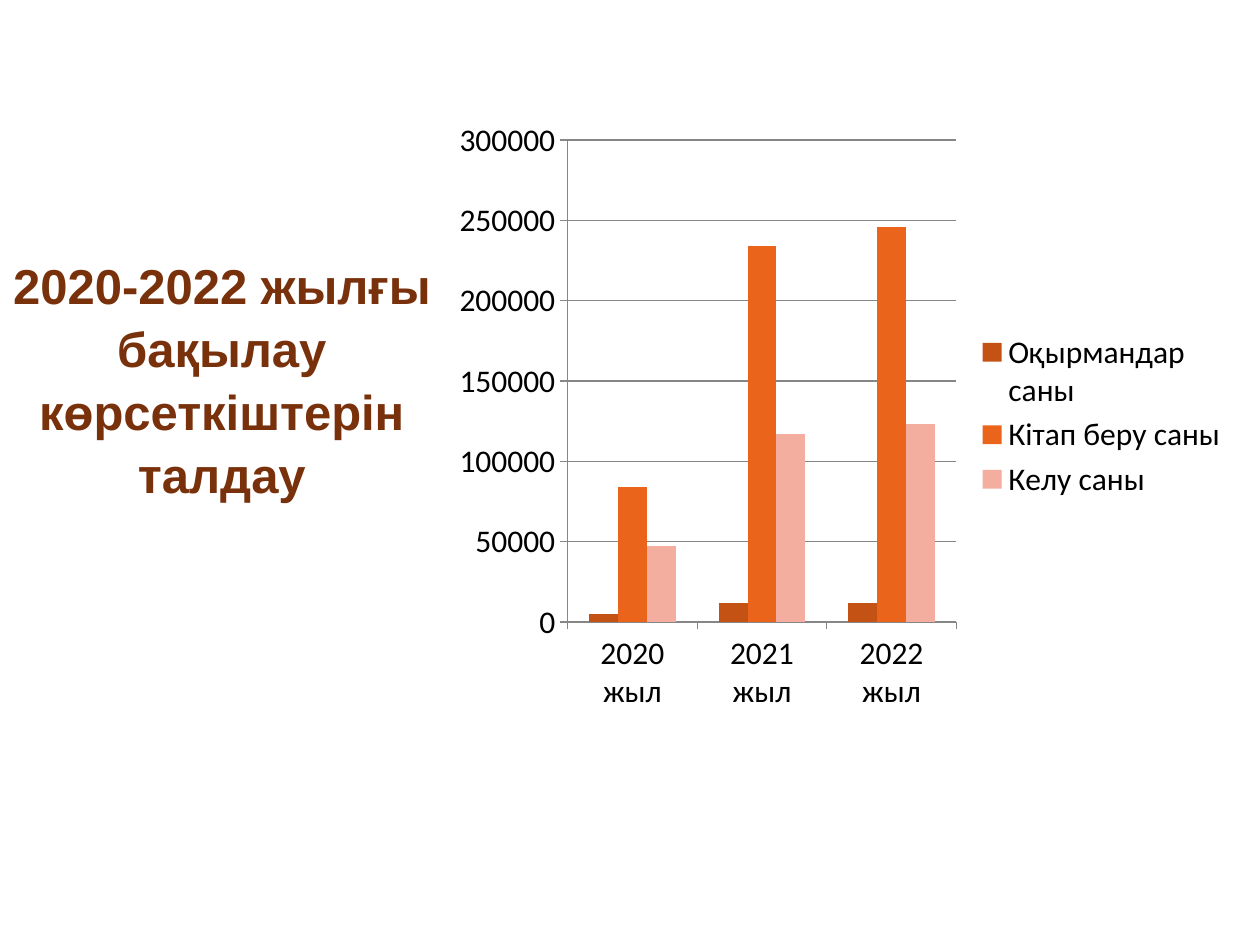
from dataclasses import dataclass

from pptx import Presentation
from pptx import util as u
from pptx.chart.data import CategoryChartData
from pptx.dml.color import RGBColor
from pptx.enum import chart as ch
from pptx.enum import text

WIDTH, HEIGHT = u.Inches(10), u.Inches(7.5)


@dataclass(frozen=True)
class Theme:
    title_font: str = "Arial"
    chart_font: str = "Calibri"
    title_size: int = 28
    chart_size: int = 18
    title_color: str = "78310B"
    ink: str = "000000"
    rule: str = "868686"
    bars: tuple = ("C35214", "EB641B", "F4AEA0")


THEME = Theme()
YEARS = ("2020 жыл", "2021 жыл", "2022 жыл")
INDICATORS = {
    "Оқырмандар саны": (5000, 12000, 12000),
    "Кітап беру саны": (84000, 234000, 246000),
    "Келу саны": (47000, 117000, 123000),
}


def area(left, top, width, height):
    """Turn shares of the slide's size into lengths."""
    return (int(WIDTH * left), int(HEIGHT * top),
            int(WIDTH * width), int(HEIGHT * height))


def style_font(font, name, size, color, bold=False):
    font.name = name
    font.size = u.Pt(size)
    font.bold = bold
    font.color.rgb = RGBColor.from_string(color)


def style_line(line):
    line.color.rgb = RGBColor.from_string(THEME.rule)
    line.width = u.Pt(0.75)


def add_title(slide, wording, place):
    frame = slide.shapes.add_textbox(*place).text_frame
    frame.word_wrap = True
    frame.auto_size = text.MSO_AUTO_SIZE.SHAPE_TO_FIT_TEXT
    heading = frame.paragraphs[0]
    heading.alignment = text.PP_ALIGN.CENTER
    heading.line_spacing = 1.07
    run = heading.add_run()
    run.text = wording
    style_font(run.font, THEME.title_font, THEME.title_size,
               THEME.title_color, bold=True)


def add_indicator_chart(slide, place):
    figures = CategoryChartData(number_format="General")
    figures.categories = YEARS
    for name, counts in INDICATORS.items():
        figures.add_series(name, counts)
    chart = slide.shapes.add_chart(
        ch.XL_CHART_TYPE.COLUMN_CLUSTERED, *place, figures).chart
    style_font(chart.font, THEME.chart_font, THEME.chart_size, THEME.ink)
    chart.has_title = False

    # Columns
    columns = chart.plots[0]
    columns.vary_by_categories = False
    columns.gap_width = 150
    columns.overlap = 0
    for series, color in zip(columns.series, THEME.bars):
        series.format.fill.solid()
        series.format.fill.fore_color.rgb = RGBColor.from_string(color)

    # Axes and gridlines
    for axis in (chart.category_axis, chart.value_axis):
        axis.major_tick_mark = ch.XL_TICK_MARK.OUTSIDE
        style_line(axis.format.line)
    counts_axis = chart.value_axis
    counts_axis.minimum_scale = 0
    counts_axis.maximum_scale = 300000
    counts_axis.major_unit = 50000
    counts_axis.has_major_gridlines = True
    style_line(counts_axis.major_gridlines.format.line)

    # Legend
    chart.has_legend = True
    chart.legend.position = ch.XL_LEGEND_POSITION.RIGHT
    chart.legend.include_in_layout = False


def main():
    deck = Presentation()
    deck.slide_width, deck.slide_height = WIDTH, HEIGHT
    slide = deck.slides.add_slide(deck.slide_layouts[6])

    # Heading on the left, chart on the right
    split = 0.352
    add_title(slide, "2020-2022 жылғы бақылау көрсеткіштерін талдау",
              area(0, 0.26, split, 0.265))
    add_indicator_chart(slide, area(split, 0.115, 0.633, 0.65))

    deck.save("out.pptx")


if __name__ == "__main__":
    main()
